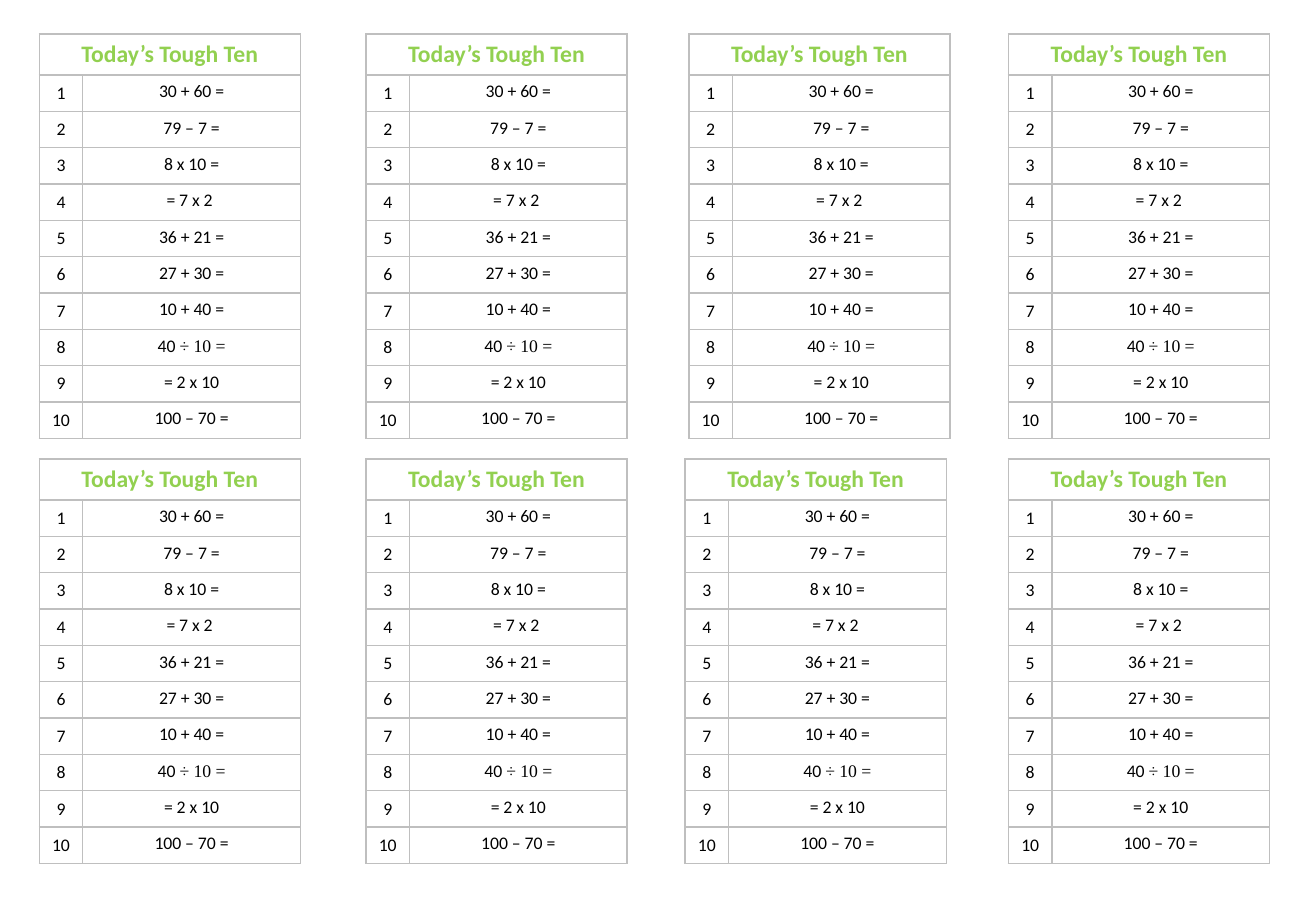
from lxml import etree
from pptx import Presentation
from pptx.dml.color import RGBColor
from pptx.enum.text import MSO_ANCHOR, PP_ALIGN
from pptx.oxml.ns import qn
from pptx.util import Cm, Pt

CENTER = PP_ALIGN.CENTER
TOP, MIDDLE = MSO_ANCHOR.TOP, MSO_ANCHOR.MIDDLE

# Content: each question is a list of (text, font) runs
BODY_FONT, SYMBOL_FONT = "Calibri", "Times New Roman"
TITLE = "Today’s Tough Ten"
QUESTIONS = [
    [("30 + 60 =", BODY_FONT)],
    [("79 – 7 =", BODY_FONT)],
    [("8 x 10 =", BODY_FONT)],
    [("= 7 x 2 ", BODY_FONT)],
    [("36 + 21 =", BODY_FONT)],
    [("27 + 30 =", BODY_FONT)],
    [("10 + 40 =", BODY_FONT)],
    [("40 ", BODY_FONT), ("÷ 10 =", SYMBOL_FONT)],
    [("= 2 x 10", BODY_FONT)],
    [("100 – 70 =", BODY_FONT)],
]

# Layout in centimetres: top of each row of cards, then the left edges
CARD_ROWS = [
    (0.71, (0.82, 7.65, 14.4, 21.08)),
    (9.6, (0.82, 7.65, 14.32, 21.08)),
]
COLUMN_WIDTHS = (0.91, 4.55)
TITLE_HEIGHT, QUESTION_HEIGHT, CARD_HEIGHT = 0.64, 0.76, 8.46

GREEN = RGBColor(0x92, 0xD0, 0x50)
BLACK = RGBColor(0x00, 0x00, 0x00)
GREY = RGBColor(0xBF, 0xBF, 0xBF)


def add_borders(cell):
    properties = cell._tc.get_or_add_tcPr()
    for index, side in enumerate(("a:lnL", "a:lnR", "a:lnT", "a:lnB")):
        line = etree.Element(qn(side), w=str(Pt(1)))
        fill = etree.SubElement(line, qn("a:solidFill"))
        etree.SubElement(fill, qn("a:srgbClr"), val=str(GREY))
        properties.insert(index, line)


def fill_cell(cell, runs, size=10.5, color=BLACK, bold=False, anchor=TOP):
    cell.vertical_anchor = anchor
    paragraph = cell.text_frame.paragraphs[0]
    paragraph.alignment = CENTER
    font = paragraph.font
    font.name, font.size, font.bold = BODY_FONT, Pt(size), bold
    font.color.rgb = color
    for text, font_name in runs:
        run = paragraph.add_run()
        run.text = text
        if font_name != BODY_FONT:
            run.font.name = font_name


def add_card(slide, left, top):
    frame = slide.shapes.add_table(
        len(QUESTIONS) + 1, len(COLUMN_WIDTHS), Cm(left), Cm(top),
        Cm(sum(COLUMN_WIDTHS)), Cm(CARD_HEIGHT))
    table = frame.table
    table.first_row = table.horz_banding = False
    for column, width in zip(table.columns, COLUMN_WIDTHS):
        column.width = Cm(width)
    for index, row in enumerate(table.rows):
        row.height = Cm(QUESTION_HEIGHT if index else TITLE_HEIGHT)
    frame.height = Cm(CARD_HEIGHT)

    for cell in table.iter_cells():
        cell.fill.background()
        add_borders(cell)

    # Title across both columns, then the numbered questions
    table.cell(0, 0).merge(table.cell(0, 1))
    fill_cell(table.cell(0, 0), [(TITLE, BODY_FONT)], 14, GREEN, True)
    for number, runs in enumerate(QUESTIONS, start=1):
        fill_cell(table.cell(number, 0), [(str(number), BODY_FONT)], anchor=MIDDLE)
        fill_cell(table.cell(number, 1), runs)


presentation = Presentation()
presentation.slide_width, presentation.slide_height = Cm(27.51), Cm(19.05)
slide = presentation.slides.add_slide(presentation.slide_layouts[6])
for top, lefts in CARD_ROWS:
    for left in lefts:
        add_card(slide, left, top)
presentation.save("out.pptx")
